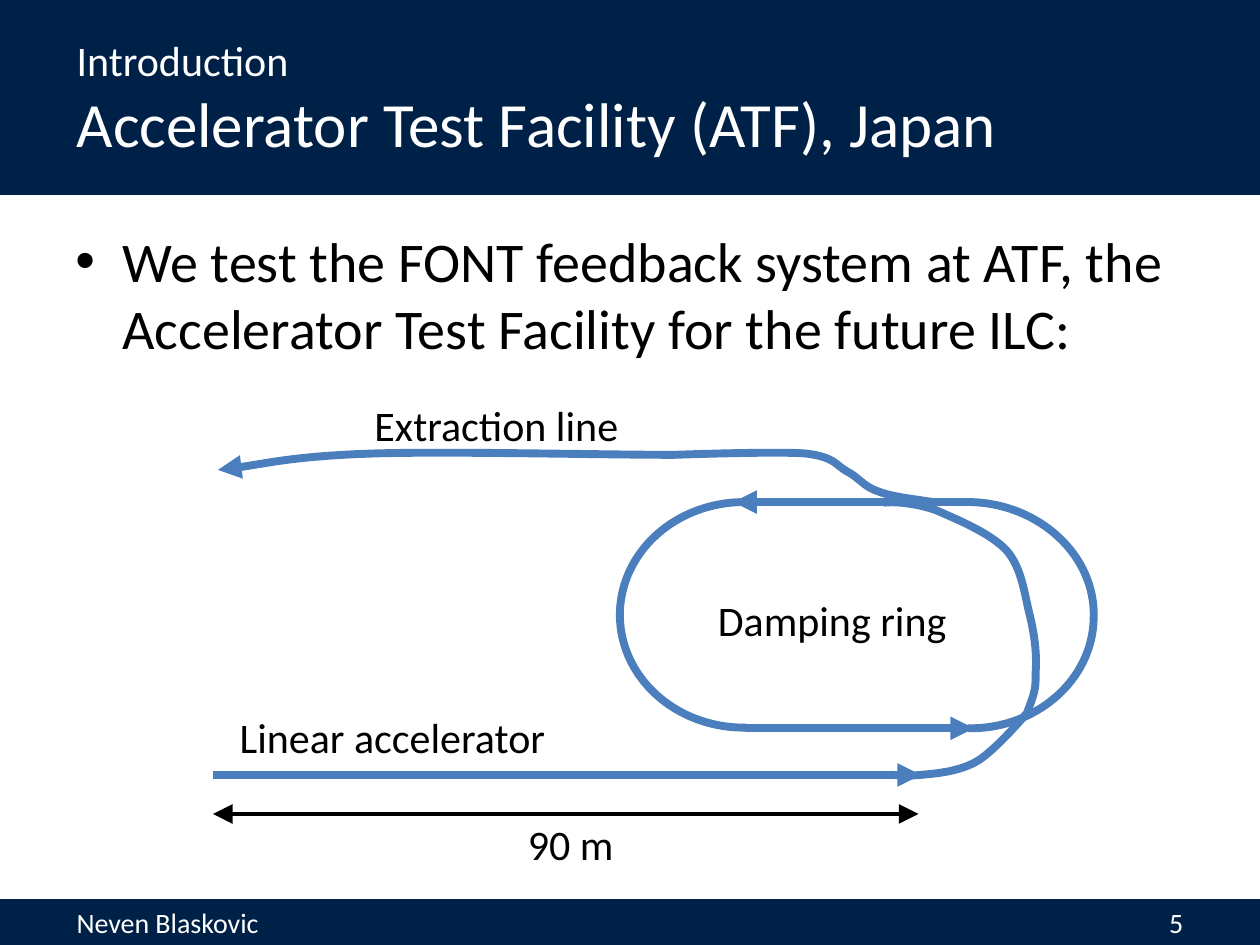
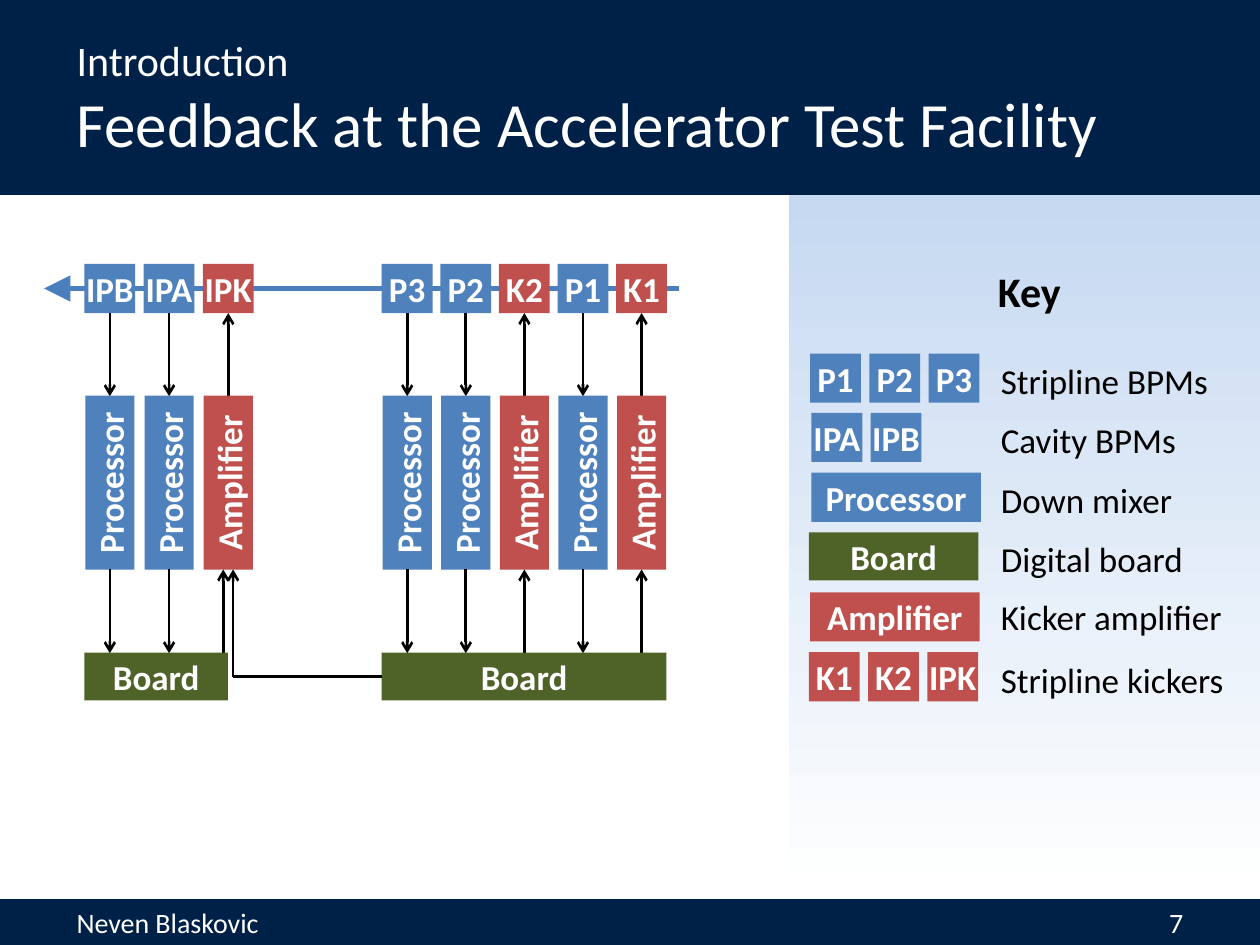
import dataclasses

import lxml.etree
import pptx
import pptx.dml.color
import pptx.enum.shapes
import pptx.enum.text
import pptx.oxml.ns
import pptx.util

RGB = pptx.dml.color.RGBColor
NAVY = RGB(0x00, 0x21, 0x47)
WHITE = RGB(0xFF, 0xFF, 0xFF)
BLACK = RGB(0x00, 0x00, 0x00)
BEAM = RGB(0x4B, 0x7E, 0xBC)
BLUE = RGB(0x4F, 0x81, 0xBD)
RED = RGB(0xC0, 0x50, 0x4D)
GREEN = RGB(0x4F, 0x62, 0x28)
PALE_BLUE = RGB(0xC6, 0xD9, 0xF1)

FONT = "Calibri"
COLS, ROWS = 100, 75
CELL = pptx.util.Inches(0.1)
RECT = pptx.enum.shapes.MSO_SHAPE.RECTANGLE
ARC = pptx.enum.shapes.MSO_SHAPE.ARC
MIDDLE = pptx.enum.text.MSO_ANCHOR.MIDDLE
LEFT = pptx.enum.text.PP_ALIGN.LEFT
CENTER = pptx.enum.text.PP_ALIGN.CENTER
qn = pptx.oxml.ns.qn


def cells(n):
    return pptx.util.Emu(round(n * CELL))


@dataclasses.dataclass
class Box:
    """An area of the slide, in grid cells."""
    x: float
    y: float
    w: float
    h: float

    def sub(self, x, y, w, h):
        return Box(self.x + x, self.y + y, w, h)

    def point(self, x, y):
        return cells(self.x + x), cells(self.y + y)

    def emu(self):
        return [cells(n) for n in (self.x, self.y, self.w, self.h)]


TITLE_BAND = Box(0, 0, COLS, 15.46)
FOOTER_BAND = Box(0, 71.36, COLS, 3.64)
BODY = Box(5, 17.5, 90, 49.5)
FACILITY = Box(17, 31, 70, 38)
FEEDBACK = Box(3.5, 20.95, 50.4, 34.6)
KEY = Box(62.6, 15.46, 37.4, 55.9)

# Each curve is a start point followed by cubic segments (two controls, one end).
EXTRACTION = [(57.3, 8.9),
              (56.4, 8.7), (53.9, 8.5), (52.7, 8),
              (51.5, 7.6), (51.2, 6.9), (50.2, 6.4),
              (49.3, 5.9), (49.3, 5.3), (47, 5),
              (44.7, 4.8), (36.5, 5.1), (36.5, 5.1),
              (30.7, 5.1), (18.5, 4.8), (12.5, 5),
              (6.5, 5.2), (2.5, 6.1), (0.3, 6.3)]
INJECTION = [(53.7, 30.5),
             (53.7, 30.5), (55.3, 30.6), (56.1, 30.5),
             (57.1, 30.4), (58.9, 30.3), (60.4, 29.5),
             (61.9, 28.7), (64.5, 25.6), (64.5, 25.6),
             (65.2, 23.8), (65.2, 23.6), (65.2, 22.3),
             (65.3, 20.9), (65.1, 19.3), (64.7, 17.7),
             (64.3, 16.1), (64.1, 14.1), (62.9, 12.7),
             (61.6, 11.3), (58.9, 10.2), (57.3, 9.5),
             (55.6, 8.9), (53.9, 8.8), (53.1, 8.9)]
RING_RIGHT = [(59.8, 26.8),
              (65.2, 26.9), (69.7, 23), (69.8, 18.1),
              (70, 13.1), (65.5, 9), (60.1, 8.85)]

# Left edge, lane pitch, devices and board width of each group of lanes.
LANE_GROUPS = [(3.2, 4.7, ["IPB", "IPA", "IPK"], 11.4),
               (26.8, 4.65, ["P3", "P2", "K2", "P1", "K1"], 22.6)]
# Left and top of the blocks, their names and fill, top of the meaning and its text.
KEY_ROWS = [(1.7, 12.6, ["P1", "P2", "P3"], BLUE, 12.6, "Stripline BPMs"),
            (1.8, 17.3, ["IPA", "IPB"], BLUE, 17.3, "Cavity BPMs"),
            (1.8, 22.05, ["Processor"], BLUE, 22, "Down mixer"),
            (1.6, 26.8, ["Board"], GREEN, 26.7, "Digital board"),
            (1.7, 31.55, ["Amplifier"], RED, 31.35, "Kicker amplifier"),
            (1.6, 36.3, ["K1", "K2", "IPK"], RED, 36.3, "Stripline kickers")]


def style_runs(p, size, color, bold=False):
    for r in p.runs:
        r.font.name = FONT
        r.font.size = pptx.util.Pt(size)
        r.font.color.rgb = color
        r.font.bold = bold


def style_line(shape, color, width, head=None, tail=None, tip="med"):
    shape.line.color.rgb = color
    shape.line.width = pptx.util.Pt(width)
    ln = shape._element.spPr.find(qn("a:ln"))
    for tag, kind in (("a:headEnd", head), ("a:tailEnd", tail)):
        if kind:
            lxml.etree.SubElement(ln, qn(tag), type=kind, w=tip, len=tip)


def add_rect(s, box, fill=None):
    sp = s.shapes.add_shape(RECT, *box.emu())
    sp.shadow.inherit = False
    sp.line.fill.background()
    if fill is not None:
        sp.fill.solid()
        sp.fill.fore_color.rgb = fill
    return sp


def add_block(s, box, text, fill):
    """A filled box with a bold white caption."""
    sp = add_rect(s, box, fill)
    tf = sp.text_frame
    tf.margin_left = tf.margin_right = 0
    tf.vertical_anchor = MIDDLE
    tf.text = text
    tf.paragraphs[0].alignment = CENTER
    style_runs(tf.paragraphs[0], 20, WHITE, True)
    return sp


def add_label(s, box, text, size=24, align=CENTER, bold=False):
    tf = s.shapes.add_textbox(*box.emu()).text_frame
    tf.word_wrap = True
    tf.text = text
    p = tf.paragraphs[0]
    p.alignment = align
    style_runs(p, size, BLACK, bold)
    return p


def add_line(s, box, start, end, color=BLACK, width=1.5, **ends):
    c = s.shapes.add_connector(pptx.enum.shapes.MSO_CONNECTOR.STRAIGHT,
                               *box.point(*start), *box.point(*end))
    style_line(c, color, width, **ends)
    lxml.etree.SubElement(c._element.spPr, qn("a:effectLst"))


def add_curve(s, box, points, tail=None):
    """An open outline whose points after the first are cubic triples."""
    first, *rest = [box.point(*pt) for pt in points]
    builder = s.shapes.build_freeform(*first)
    builder.add_line_segments(rest, close=False)
    sp = builder.convert_to_shape()
    segments = list(sp._element.iter(qn("a:lnTo")))
    for i in range(0, len(segments), 3):
        cubic = lxml.etree.Element(qn("a:cubicBezTo"))
        segments[i].addprevious(cubic)
        for segment in segments[i:i + 3]:
            cubic.append(segment[0])
            segment.getparent().remove(segment)
    sp.shadow.inherit = False
    sp.fill.background()
    style_line(sp, BEAM, 4.5, tail=tail)


def add_band(s, box, lines, tab=None):
    """A full-width navy band; lines holds (text, size) pairs."""
    tf = add_rect(s, box, NAVY).text_frame
    tf.vertical_anchor = MIDDLE
    tf.text = "\n".join(text for text, _ in lines)
    for p, (_, size) in zip(tf.paragraphs, lines):
        pPr = p._p.get_or_add_pPr()
        pPr.set("marL", str(cells(5.1)))
        if tab:
            tabs = lxml.etree.SubElement(pPr, qn("a:tabLst"))
            lxml.etree.SubElement(tabs, qn("a:tab"), pos=str(cells(tab)), algn="r")
        p.alignment = LEFT
        style_runs(p, size, WHITE)


def add_side_panel(s, box):
    panel = add_rect(s, box)
    panel.fill.gradient()
    panel.fill.gradient_angle = 270
    for stop, color in zip(panel.fill.gradient_stops, (PALE_BLUE, WHITE)):
        stop.color.rgb = color


def add_slide(prs, title, number, side=None):
    s = prs.slides.add_slide(prs.slide_layouts[6])
    if side:
        add_side_panel(s, side)
    add_band(s, TITLE_BAND, [("Introduction", 24), (title, 36)])
    add_band(s, FOOTER_BAND, [(f"Neven Blaskovic \t{number}", 16)], tab=92.9)
    return s


def add_bullet(s, box, text):
    p = add_label(s, box, text, 32, LEFT)
    pPr = p._p.get_or_add_pPr()
    pPr.set("marL", str(cells(3.75)))
    pPr.set("indent", str(-cells(3.75)))
    lxml.etree.SubElement(pPr, qn("a:buFont"), typeface="Arial")
    lxml.etree.SubElement(pPr, qn("a:buChar"), char="•")


def draw_ring_left(s, box):
    arc = s.shapes.add_shape(ARC, *box.emu())
    arc.adjustments[0] = 53.42
    arc.adjustments[1] = 160.87
    arc.shadow.inherit = False
    arc.fill.background()
    style_line(arc, BEAM, 4.5)


def draw_facility(s, box):
    add_curve(s, box, EXTRACTION, "triangle")
    add_line(s, box, (-0.1, 30.5), (56.1, 30.5), BEAM, 4.5, tail="triangle")
    add_curve(s, box, INJECTION)
    add_line(s, box, (54.3, 8.85), (41.2, 8.85), BEAM, 4.5, tail="triangle")
    draw_ring_left(s, box.sub(32.2, 8.85, 19.7, 17.9))
    add_line(s, box, (60.3, 26.8), (42.1, 26.8), BEAM, 4.5, head="triangle")
    add_curve(s, box, RING_RIGHT)
    add_line(s, box, (60.3, 8.85), (52.5, 8.85), BEAM, 4.5)
    add_line(s, box, (-0.1, 33.6), (55.9, 33.6), BLACK, 2.25,
             head="triangle", tail="triangle", tip="lg")
    for text, area in [("Linear accelerator", (0.3, 25, 27.7, 3.8)),
                       ("Damping ring", (35.2, 15.7, 27.7, 3.8)),
                       ("Extraction line", (7.8, 0.2, 29.2, 5)),
                       ("90 m", (0.5, 33.5, 55.6, 3.8))]:
        add_label(s, box.sub(*area), text)


def draw_lane(s, box, device):
    """A beamline device above its electronics, down to the board."""
    kicker = "K" in device
    fill, unit = (RED, "Amplifier") if kicker else (BLUE, "Processor")
    ends = {"head": "arrow"} if kicker else {"tail": "arrow"}
    mid = box.w / 2
    lower = mid - 0.4 if device == "IPK" else mid
    add_block(s, box.sub(0, 0, box.w, 3.9), device, fill)
    add_line(s, box, (mid, 3.9), (mid, 10.5), **ends)
    add_block(s, box.sub(mid - 6.9, 15.4, 13.8, 3.9), unit, fill).rotation = 270
    add_line(s, box, (lower, 24.25), (lower, 30.9), **ends)


def draw_feedback(s, box):
    add_line(s, box, (0, 1.95), (box.w, 1.95), BEAM, 3, head="triangle", tip="lg")
    for left, pitch, devices, board_width in LANE_GROUPS:
        for i, device in enumerate(devices):
            draw_lane(s, box.sub(left + i * pitch, 0, 4.04, box.h), device)
        add_block(s, box.sub(left, 30.85, board_width, 3.8), "Board", GREEN)
    add_line(s, box, (26.8, 32.75), (15, 32.75))
    add_line(s, box, (15, 24.25), (15, 32.75), head="arrow")


def draw_key(s, box):
    for left, top, names, fill, meaning_top, meaning in KEY_ROWS:
        width = 13.45 if len(names) == 1 else 4.04
        height = 3.8 if fill == GREEN else 3.9
        for i, name in enumerate(names):
            add_block(s, box.sub(left + i * 4.7, top, width, height), name, fill)
        add_label(s, box.sub(15.85, meaning_top, 20.4, 4.4), meaning, 20, LEFT)
    add_label(s, box.sub(1.8, 5.15, 34.6, 5), "Key", bold=True)


def main():
    prs = pptx.Presentation()
    prs.slide_width, prs.slide_height = cells(COLS), cells(ROWS)

    s = add_slide(prs, "Accelerator Test Facility (ATF), Japan", 5)
    add_bullet(s, BODY, "We test the FONT feedback system at ATF, the "
                        "Accelerator Test Facility for the future ILC:")
    draw_facility(s.shapes.add_group_shape(), FACILITY)

    s = add_slide(prs, "Feedback at the Accelerator Test Facility", 7, side=KEY)
    draw_feedback(s, FEEDBACK)
    draw_key(s, KEY)

    prs.save("out.pptx")


if __name__ == "__main__":
    main()
